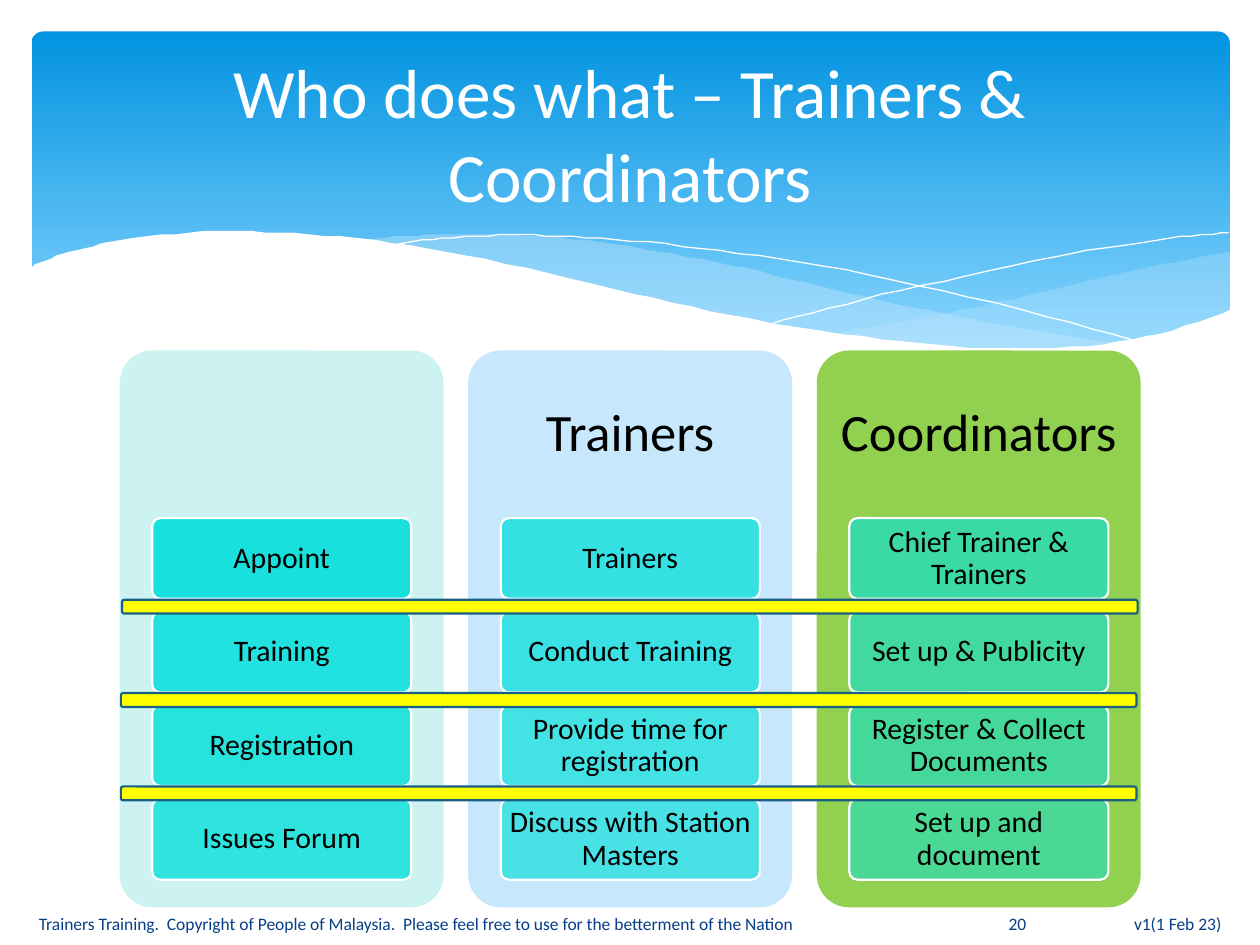
from lxml.etree import SubElement
from pptx import Presentation
from pptx.dml.color import RGBColor
from pptx.enum.shapes import MSO_SHAPE as Shape
from pptx.enum.text import MSO_ANCHOR as Anchor, PP_ALIGN as Align
from pptx.oxml.ns import qn
from pptx.util import Pt

COLORS = {
    "white": "FFFFFF", "black": "000000", "sky_top": "0293E0", "sky_bottom": "83D3FE",
    "mist": "C6E7FC", "mint": "CCF3F1", "green": "92D050", "teal": "05E0DB",
    "yellow": "FFFF00", "bar_edge": "195F84", "footer": "073E87",
}
COLUMNS = [
    ("", "mint", ["Appoint", "Training", "Registration", "Issues Forum"]),
    ("Trainers", "mist", ["Trainers", "Conduct Training", "Provide time for registration",
                          "Discuss with Station Masters"]),
    ("Coordinators", "green", ["Chief Trainer & Trainers", "Set up & Publicity",
                               "Register & Collect Documents", "Set up and document"]),
]
FAR_WAVE = [
    [(684.7, 126), (645, 133.2), (602, 142.6), (561.6, 152.6), (524, 160.6), (490, 167), (458, 172.8)],
    [(458, 172.8), (489.6, 177), (527, 180.7), (568, 182), (603.4, 180), (633.6, 175.7),
     (660, 168.5), (684.7, 159.8)],
]
NEAR_WAVE = [
    [(625, 178.6), (584.6, 172.8), (540, 164.9), (490, 154.8), (435, 141.8), (391.7, 131.8),
     (352, 124.6), (316, 119.5), (284.4, 116.6), (242, 115.9), (207.4, 117.4), (188, 119.5)],
    [(188, 119.5), (228, 125.3), (273, 133.9), (305.3, 141.8), (363.6, 154.8), (414.7, 165.6),
     (460.8, 173.5), (501.8, 179.3), (547, 182), (585.4, 182), (625, 178.6)],
]
FALLING_LINE = [(204.5, 122.4), (229, 118.8), (260.6, 116.6), (293.8, 116.6), (334, 118.8), (382.3, 123.8),
                (440, 131.8), (505.4, 144.7), (580.3, 162.7), (635, 177.8)]
RISING_LINE = [(423.4, 167), (465.8, 155.5), (520.6, 142.6), (584, 128.9), (626.4, 121.7),
               (656.6, 117.4), (684, 115.2)]
WHITE_WAVE = [
    [(685.4, 159), (651.6, 170.6), (612, 178.6), (564.5, 181.4), (517.7, 179.3), (463, 172.8), (399, 162),
     (344, 149.8), (283, 135.4), (226, 123.8), (177, 117.4), (134, 114.5), (98, 114.5), (58.3, 118),
     (30.2, 123.8), (10.8, 129.6), (-1.4, 135.4)],
    [(-1.4, 218.9), (685.4, 218.9)],
]


def rgb(name):
    """Return the named colour."""
    return RGBColor.from_string(COLORS[name])


def paint(shape, fill=None, alpha=100, line=None, width=1.25):
    """Set fill, opacity and outline of a shape."""
    shape.shadow.inherit = False
    if fill:
        shape.fill.solid()
        shape.fill.fore_color.rgb = rgb(fill)
        if alpha < 100:
            color = shape.fill._xPr.find(qn("a:solidFill"))[0]
            SubElement(color, qn("a:alpha"), val=str(round(alpha * 1000)))
    else:
        shape.fill.background()
    if line:
        shape.line.color.rgb = rgb(line)
        shape.line.width = Pt(width)
    else:
        shape.line.fill.background()


def rounded(slide, box, radius):
    """Add a rounded rectangle with a relative corner radius."""
    shape = slide.shapes.add_shape(Shape.ROUNDED_RECTANGLE, *map(Pt, box))
    shape.adjustments[0] = radius
    return shape


def write(shape, text, size, color, align=Align.CENTER, spacing=1.0, margins=(7.2, 3.6)):
    """Write one middle-anchored paragraph into a shape."""
    frame = shape.text_frame
    frame.word_wrap = True
    frame.vertical_anchor = Anchor.MIDDLE
    frame.margin_left = frame.margin_right = Pt(margins[0])
    frame.margin_top = frame.margin_bottom = Pt(margins[1])
    paragraph = frame.paragraphs[0]
    paragraph.text = text
    paragraph.alignment = align
    paragraph.line_spacing = spacing
    paragraph.font.size = Pt(size)
    paragraph.font.name = "Calibri"
    paragraph.font.color.rgb = rgb(color)


def label(slide, box, *args, **kwargs):
    """Add a text box holding one paragraph."""
    write(slide.shapes.add_textbox(*map(Pt, box)), *args, **kwargs)


def smooth(knots, steps=5):
    """Return points of a Catmull-Rom curve through the knots."""
    padded = [knots[0], *knots, knots[-1]]
    points = [knots[0]]
    for quad in zip(padded, padded[1:], padded[2:], padded[3:]):
        for step in range(1, steps + 1):
            t = step / steps
            points.append(tuple(
                b + t * (c - a) / 2 + t**2 * (2 * a - 5 * b + 4 * c - d) / 2
                + t**3 * (3 * b - a - 3 * c + d) / 2
                for a, b, c, d in zip(*quad)))
    return points


def outline(slide, left, top, edges, close=True):
    """Build a freeform from curved edges relative to a corner."""
    points = [(left + x, top + y) for edge in edges
              for x, y in (smooth(edge) if len(edge) > 2 else edge)]
    builder = slide.shapes.build_freeform(*points[0], scale=Pt(1))
    builder.add_line_segments(points[1:], close=close)
    return builder.convert_to_shape()


def add_header(slide, left, top, width, height):
    """Draw the gradient band with its waves."""
    band = rounded(slide, (left, top, width, height), 0.034)
    paint(band)
    band.fill.gradient()
    band.fill.gradient_angle = 270
    stops = zip(band.fill.gradient_stops, ("sky_top", "sky_bottom"), (0, 0.9))
    for stop, color, position in stops:
        stop.color.rgb = rgb(color)
        stop.position = position
    paint(outline(slide, left, top, FAR_WAVE), "mist", 29)
    paint(outline(slide, left, top, NEAR_WAVE), "mist", 40)
    for curve in (FALLING_LINE, RISING_LINE):
        paint(outline(slide, left, top, [curve], close=False), line="white", width=0)
    paint(outline(slide, left, top, WHITE_WAVE), "white")


def add_column(slide, left, top, width, height, heading, color, tasks, first):
    """Draw one panel with its heading and task cards."""
    paint(rounded(slide, (left, top, width, height), 0.1), color)
    if heading:
        label(slide, (left, top, width, 95.8), heading, 30, "black", spacing=0.9, margins=(8.6, 8.6))
    for row, task in enumerate(tasks):
        card = rounded(slide, (left + 18.6, top + 95.8 + row * 53.5, width - 37, 46.1), 0.1)
        paint(card, "teal", 90 - (first + row) * 40 / 11, "white")
        write(card, task, 17, "black", spacing=0.9, margins=(3.6, 2.9))


def add_matrix(slide, left, top, width, height):
    """Draw the columns and the bars that separate their rows."""
    gap = 14.1
    column_width = (width - 2 * gap) / 3
    for index, (heading, color, tasks) in enumerate(COLUMNS):
        add_column(slide, left + index * (column_width + gap), top, column_width, height,
                   heading, color, tasks, index * len(tasks))
    for row, inset in enumerate((1.4, 0.7, 0.7)):
        bar = rounded(slide, (left + inset, top + 142.4 + row * 53.35, 580.3, 7.9), 0.1667)
        paint(bar, "yellow", line="bar_edge")


def add_footer(slide, left, top, width, height):
    """Write the version, copyright and slide number."""
    label(slide, (left + width - 85, top, 85, height), "v1(1 Feb 23)", 10, "footer", Align.RIGHT)
    label(slide, (left, top, 518.4, height),
          "Trainers Training.  Copyright of People of Malaysia.  "
          "Please feel free to use for the betterment of the Nation", 10, "footer", Align.LEFT)
    label(slide, (left + 543.6, top, 45.4, height), "20", 10, "footer")


def main():
    """Build and save the slide."""
    deck = Presentation()
    deck.slide_width, deck.slide_height = Pt(720), Pt(540)
    slide = deck.slides.add_slide(deck.slide_layouts[6])
    add_header(slide, 18, 18, 684.7, 194.4)
    add_matrix(slide, 68.4, 200.3, 583.4, 318.2)
    add_footer(slide, 15.1, 518.4, 689.8, 18.7)
    label(slide, (36, 26.6, 648, 98.6), "Who does what – Trainers & Coordinators", 39.6, "white")
    deck.save("out.pptx")


if __name__ == "__main__":
    main()
